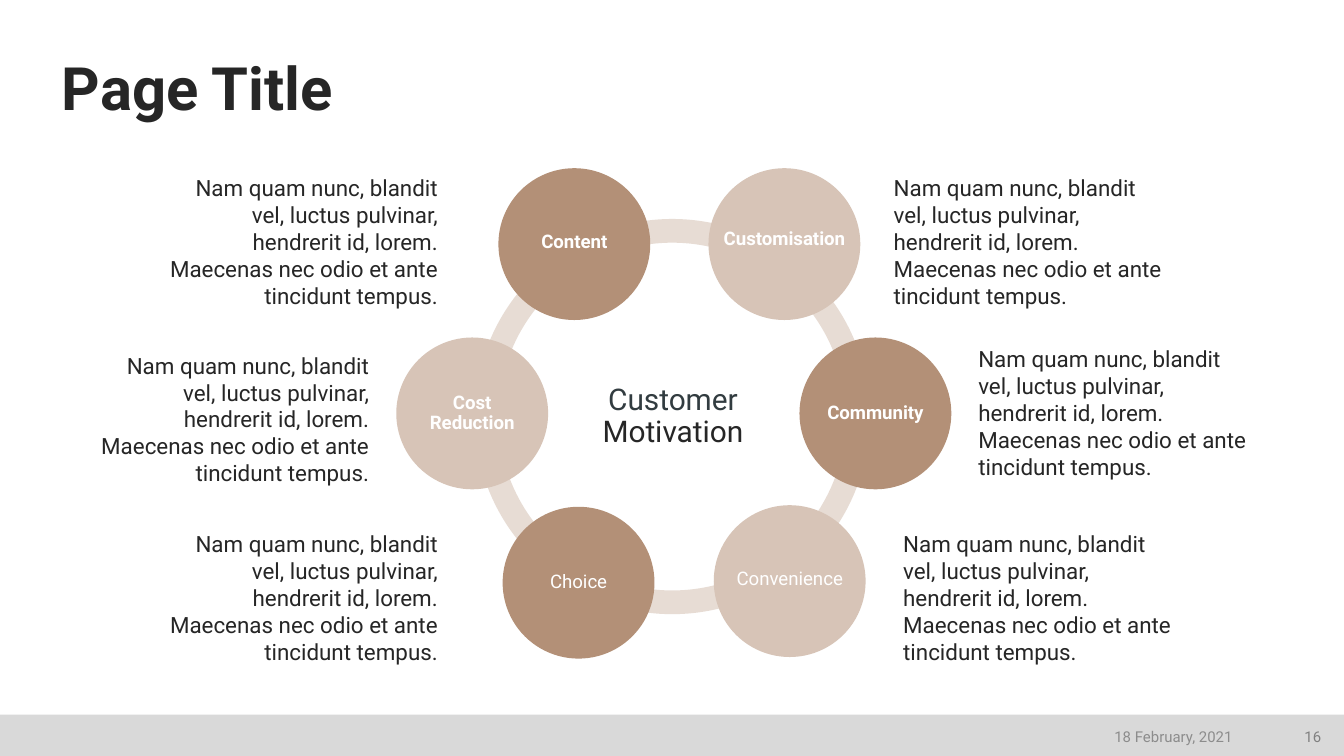
from pptx import Presentation
from pptx.dml.color import RGBColor
from pptx.enum.shapes import MSO_SHAPE
from pptx.enum.text import MSO_ANCHOR, PP_ALIGN
from pptx.util import Cm, Pt

RECT, OVAL, DONUT = MSO_SHAPE.RECTANGLE, MSO_SHAPE.OVAL, MSO_SHAPE.DONUT
TOP, MIDDLE, BOTTOM = MSO_ANCHOR.TOP, MSO_ANCHOR.MIDDLE, MSO_ANCHOR.BOTTOM
LEFT, CENTER, RIGHT = PP_ALIGN.LEFT, PP_ALIGN.CENTER, PP_ALIGN.RIGHT

FONT = "Roboto"
INK, WHITE = "262626", "FFFFFF"
BROWN, BEIGE, RING = "B39077", "D7C4B7", "E7DCD4"
CIRCLE = 2.87
BODY = ("Nam quam nunc, blandit vel, luctus pulvinar, hendrerit id, lorem. "
        "Maecenas nec odio et ante tincidunt tempus.")

CIRCLES = [
    (13.39, 3.18, BEIGE, ["Customisation"], 2.79, -0.08, True),
    (9.42, 3.18, BROWN, ["Content"], 2.24, -0.03, True),
    (9.5, 9.58, BROWN, ["Choice"], 2.24, 0, False),
    (7.49, 6.38, BEIGE, ["Cost", "Reduction"], 2.24, 0, True),
    (13.49, 9.55, BEIGE, ["Convenience"], 2.51, -0.03, False),
    (15.11, 6.38, BROWN, ["Community"], 2.24, 0, True),
]
NOTES = [
    (17.07, 10.03, LEFT), (18.49, 6.53, LEFT), (16.89, 3.3, LEFT),
    (3, 10.03, RIGHT), (1.7, 6.65, RIGHT), (3, 3.3, RIGHT),
]


def rgb(value):
    """Turn a hex string into a colour."""
    return RGBColor.from_string(value)


def add_filled(s, kind, left, top, width, height, color):
    """Add a plain filled shape without an outline."""
    sp = s.shapes.add_shape(kind, Cm(left), Cm(top), Cm(width), Cm(height))
    sp.shadow.inherit = False
    sp.fill.solid()
    sp.fill.fore_color.rgb = rgb(color)
    sp.line.fill.background()
    return sp


def add_text(s, box, lines, size, color=INK, align=LEFT, anchor=TOP,
             bold=False, spacing=None, inset=(0, 0)):
    """Add a text box with one paragraph per line and return its text frame."""
    tf = s.shapes.add_textbox(*[Cm(v) for v in box]).text_frame
    tf.word_wrap = True
    tf.vertical_anchor = anchor
    tf.margin_left = tf.margin_right = Cm(inset[0])
    tf.margin_top = tf.margin_bottom = Cm(inset[1])
    for i, line in enumerate(lines):
        p = tf.add_paragraph() if i else tf.paragraphs[0]
        p.alignment = align
        if spacing:
            p.line_spacing = spacing
        r = p.add_run()
        r.text = line
        r.font.name = FONT
        r.font.size = Pt(size)
        r.font.bold = bold
        r.font.color.rgb = rgb(color)
    return tf


def add_circle(s, left, top, color, lines, width, shift, bold):
    """Add a circle with its label centred on it."""
    add_filled(s, OVAL, left, top, CIRCLE, CIRCLE, color)
    height = 0.39 * len(lines)
    box = (left + (CIRCLE - width) / 2,
           top + (CIRCLE - height) / 2 + shift, width, height)
    add_text(s, box, lines, 10, WHITE, CENTER, MIDDLE, bold, 0.9)


def add_footer(s):
    """Add the date and the page number."""
    for left, width, text, color in [(24.28, 0.94, "16", "808080"),
                                     (17.83, 5.72, "18 February, 2021", "8C8C8C")]:
        add_text(s, (left, 13.59, width, 0.66), [text], 8, color, RIGHT,
                 MIDDLE, inset=(0.25, 0.13))


def main():
    """Build the slide and save it."""
    prs = Presentation()
    prs.slide_width, prs.slide_height = Cm(25.4), Cm(14.29)
    s = prs.slides.add_slide(prs.slide_layouts[6])

    add_filled(s, RECT, 0, 13.51, 25.4, 0.78, "D9D9D9")
    add_text(s, (1.17, 1.02, 23.11, 1.32), ["Page Title"], 32,
             anchor=BOTTOM, bold=True, spacing=0.9)
    ring = add_filled(s, DONUT, 8.97, 4.14, 7.47, 7.47, RING)
    ring.adjustments[0] = 0.06
    for circle in CIRCLES:
        add_circle(s, *circle)
    tf = add_text(s, (11.07, 7.26, 3.3, 1.24), ["Customer", "Motivation"], 16,
                  align=CENTER, anchor=MIDDLE, spacing=0.9)
    tf.paragraphs[0].runs[0].font.color.rgb = rgb("323C40")
    for left, top, align in NOTES:
        add_text(s, (left, top, 5.28, 2.57), [BODY], 12, align=align)
    add_footer(s)
    prs.save("out.pptx")


if __name__ == "__main__":
    main()
